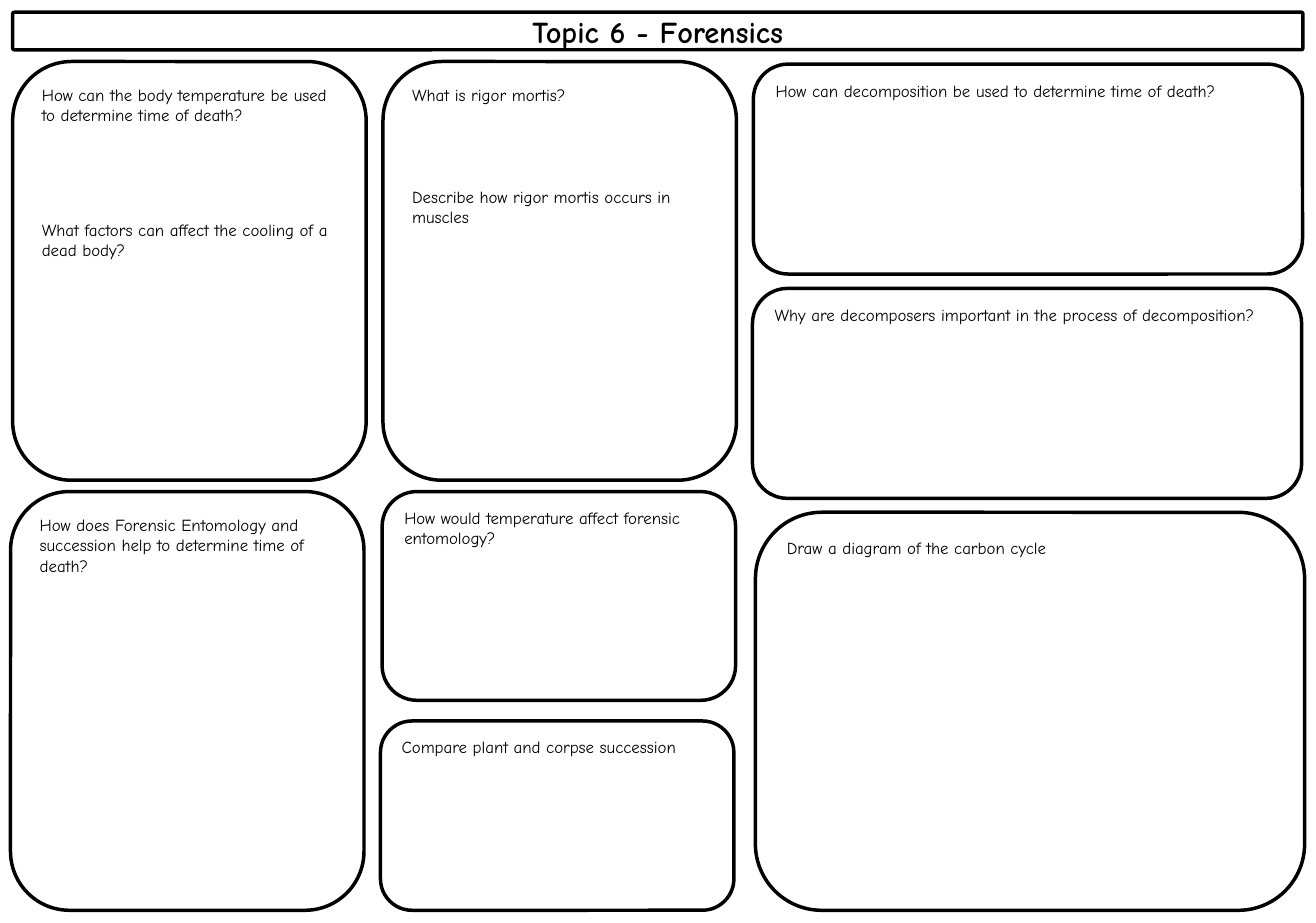
from dataclasses import dataclass

from pptx import Presentation
from pptx.dml.color import RGBColor
from pptx.enum.shapes import MSO_SHAPE as Shape
from pptx.enum.text import MSO_ANCHOR as Anchor, PP_ALIGN as Align
from pptx.util import Emu, Pt

PX = 3175


@dataclass(frozen=True)
class Theme:
    font: str = "Comic Neue"
    ink: RGBColor = RGBColor(0, 0, 0)
    paper: RGBColor = RGBColor(255, 255, 255)
    title_size: int = 18
    question_size: int = 10
    outline: float = 2.08


THEME = Theme()

CARDS = [
    ((1791, 1215, 1302, 944), ["Draw a diagram of the carbon cycle"], 0),
    ((30, 146, 838, 993),
     ["How can the body temperature be used to determine time of death?",
      "What factors can affect the cooling of a dead body?"], 56),
    ((908, 146, 838, 993),
     ["What is rigor mortis?", "Describe how rigor mortis occurs in muscles"], 48.5),
    ((25, 1166, 838, 993),
     ["How does Forensic Entomology and succession help to determine time of death?"], 0),
    ((906, 1166, 838, 495), ["How would temperature affect forensic entomology?"], 0),
    ((902, 1710, 838, 449), ["Compare plant and corpse succession"], 0),
    ((1784, 684, 1302, 498),
     ["Why are decomposers important in the process of decomposition?"], 0),
    ((1786, 152, 1302, 498),
     ["How can decomposition be used to determine time of death?"], 0),
]


def add_frame(page, box):
    frame = page.shapes.add_shape(Shape.ROUNDED_RECTANGLE, *(Emu(n * PX) for n in box))
    frame.shadow.inherit = False
    frame.line.color.rgb = THEME.ink
    frame.line.width = Pt(THEME.outline)
    frame.text_frame.word_wrap = True
    return frame


def write(para, text, size, align, bold=False):
    para.text = text
    para.alignment = align
    for span in para.runs:
        span.font.name = THEME.font
        span.font.size = Pt(size)
        span.font.bold = bold
        span.font.color.rgb = THEME.ink


def add_title(page, box, text):
    frame = add_frame(page, box)
    frame.fill.background()
    frame.adjustments[0] = 0.045
    frame.text_frame.vertical_anchor = Anchor.MIDDLE
    write(frame.text_frame.paragraphs[0], text, THEME.title_size, Align.CENTER, True)


def add_card(page, box, questions, answer_gap):
    card = add_frame(page, box)
    card.fill.solid()
    card.fill.fore_color.rgb = THEME.paper
    body = card.text_frame
    body.vertical_anchor = Anchor.TOP
    for index, question in enumerate(questions):
        para = body.add_paragraph() if index else body.paragraphs[0]
        write(para, question, THEME.question_size, Align.LEFT)
        if index:
            para.space_before = Pt(answer_gap)


def main():
    deck = Presentation()
    deck.slide_width = Emu(3120 * PX)
    deck.slide_height = Emu(2189 * PX)
    page = deck.slides.add_slide(deck.slide_layouts[6])
    add_title(page, (30, 29, 3059, 89), "Topic 6 - Forensics")
    for box, questions, answer_gap in CARDS:
        add_card(page, box, questions, answer_gap)
    deck.save("out.pptx")


if __name__ == "__main__":
    main()
